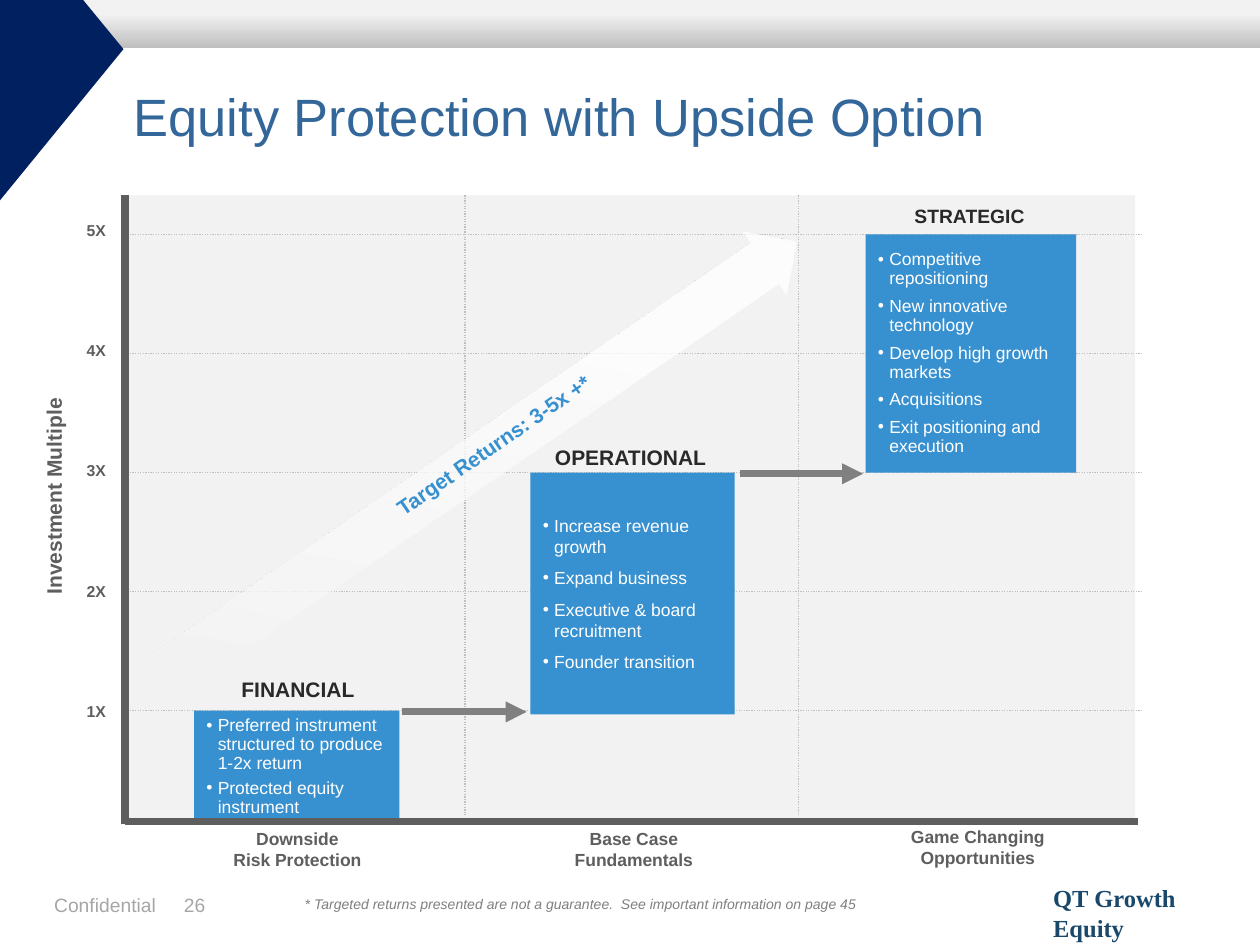
from lxml.etree import SubElement
from pptx import Presentation
from pptx.dml.color import RGBColor
from pptx.enum.dml import MSO_LINE
from pptx.enum.shapes import MSO_CONNECTOR, MSO_SHAPE
from pptx.enum.text import MSO_ANCHOR, MSO_AUTO_SIZE, PP_ALIGN
from pptx.oxml.ns import qn
from pptx.util import Inches, Pt

NAVY = RGBColor(0x00, 0x20, 0x60)
TITLE_BLUE = RGBColor(0x33, 0x66, 0x99)
BLUE = RGBColor(0x37, 0x90, 0xCF)
BRAND_BLUE = RGBColor(0x19, 0x48, 0x6A)
BLACK = RGBColor(0x29, 0x29, 0x29)
AXIS_GRAY = RGBColor(0x5E, 0x5E, 0x5E)
NOTE_GRAY = RGBColor(0x7F, 0x7F, 0x7F)
ARROW_GRAY = RGBColor(0x80, 0x80, 0x80)
FOOTER_GRAY = RGBColor(0xA5, 0xA6, 0xA6)
GRID_GRAY = RGBColor(0xBF, 0xBF, 0xBF)
PALE_GRAY = RGBColor(0xF2, 0xF2, 0xF2)
WHITE = RGBColor(0xFF, 0xFF, 0xFF)


def write_text(frame, text, size=10, color=AXIS_GRAY, bold=False, italic=False,
               font="Arial", align=PP_ALIGN.LEFT, before=0, after=0,
               spacing=None, bullet=False):
    """Fill a text frame, one paragraph for each line of text."""
    for index, line in enumerate(text.split("\n")):
        paragraph = frame.paragraphs[0] if index == 0 else frame.add_paragraph()
        if bullet:
            properties = paragraph._p.get_or_add_pPr()
            properties.set("marL", str(Inches(0.09)))
            properties.set("indent", str(-Inches(0.09)))
            SubElement(properties, qn("a:buFont"), typeface="Arial")
            SubElement(properties, qn("a:buChar"), char="•")
        paragraph.alignment = align
        paragraph.space_before = Pt(before if index else 0)
        paragraph.space_after = Pt(after)
        if spacing:
            paragraph.line_spacing = spacing
        run = paragraph.add_run()
        run.text = line
        run.font.name = font
        run.font.size = Pt(size)
        run.font.bold = bold
        run.font.italic = italic
        run.font.color.rgb = color


class SlideBuilder:
    def __init__(self, slide):
        self.shapes = slide.shapes

    def text(self, text, left, top, width, height, wrap=True, rotation=0,
             inset=True, anchor=MSO_ANCHOR.TOP, **style):
        box = self.shapes.add_textbox(
            Inches(left), Inches(top), Inches(width), Inches(height))
        box.rotation = rotation
        frame = box.text_frame
        frame.word_wrap = wrap
        frame.vertical_anchor = anchor
        if inset:
            frame.auto_size = MSO_AUTO_SIZE.SHAPE_TO_FIT_TEXT
        else:
            frame.margin_left = frame.margin_right = 0
            frame.margin_top = frame.margin_bottom = 0
        write_text(frame, text, **style)

    def block(self, left, top, width, height, kind=MSO_SHAPE.RECTANGLE,
              color=None):
        shape = self.shapes.add_shape(
            kind, Inches(left), Inches(top), Inches(width), Inches(height))
        self.finish(shape, color)
        return shape

    def finish(self, shape, color):
        shape.shadow.inherit = False
        shape.line.fill.background()
        if color is not None:
            shape.fill.solid()
            shape.fill.fore_color.rgb = color

    def polygon(self, points, color):
        corners = [(Inches(x), Inches(y)) for x, y in points]
        outline = self.shapes.build_freeform(*corners[0])
        outline.add_line_segments(corners[1:], close=True)
        self.finish(outline.convert_to_shape(), color)

    def gradient(self, shape, stops, angle, opacity=None):
        """Apply a two-stop gradient; the angle runs counter-clockwise."""
        shape.fill.gradient()
        shape.fill.gradient_angle = angle
        for stop, (position, color) in zip(shape.fill.gradient_stops, stops):
            stop.position = position
            stop.color.rgb = color
        if opacity:
            for tint in shape._element.spPr.iter(qn("a:srgbClr")):
                SubElement(tint, qn("a:alpha"), val=str(opacity * 1000))

    def bullets(self, shape, text, anchor=MSO_ANCHOR.MIDDLE, **style):
        frame = shape.text_frame
        frame.word_wrap = True
        frame.vertical_anchor = anchor
        write_text(frame, text, color=WHITE, bullet=True, **style)

    def line(self, start, end, color, width, dotted=False, arrow=False):
        connector = self.shapes.add_connector(
            MSO_CONNECTOR.STRAIGHT, *map(Inches, start + end))
        connector.line.color.rgb = color
        connector.line.width = Pt(width)
        if dotted:
            connector.line.dash_style = MSO_LINE.ROUND_DOT
        if arrow:
            SubElement(connector.line._get_or_add_ln(), qn("a:tailEnd"),
                       type="triangle")
        SubElement(connector._element.spPr, qn("a:effectLst"))


def main():
    presentation = Presentation()
    presentation.slide_width = Inches(10)
    presentation.slide_height = Inches(7.5)
    page = SlideBuilder(
        presentation.slides.add_slide(presentation.slide_layouts[6]))

    banner = page.block(0, 0, 10, 0.38)
    page.gradient(banner, [(0, GRID_GRAY), (0.72, PALE_GRAY)], 90)
    page.polygon([(0, 0), (0.66, 0), (0.98, 0.39), (0, 1.59)], NAVY)
    page.text("Equity Protection with Upside Option", 1.06, 0.44, 8.58, 1.02,
              inset=False, anchor=MSO_ANCHOR.MIDDLE, size=30,
              color=TITLE_BLUE, spacing=0.9)

    # Plot area, grid and axes
    page.block(0.98, 1.55, 8.03, 4.96, color=PALE_GRAY)
    for x in (3.69, 6.34):
        page.line((x, 1.55), (x, 6.47), GRID_GRAY, 0.75, dotted=True)
    for step in range(5):
        y = 5.64 - 0.945 * step
        page.line((1.03, y), (9.07, y), GRID_GRAY, 0.75, dotted=True)
        page.text(f"{step + 1}X", 0.59, 5.52 - 0.955 * step, 0.36, 0.25,
                  wrap=False, size=9, bold=True, after=6)
    page.line((0.99, 6.54), (0.99, 1.55), AXIS_GRAY, 4.5)
    page.text("Investment Multiple", -0.46, 3.78, 1.77, 0.3, wrap=False,
              rotation=270, size=12, bold=True, after=6)

    # Stages
    for name, left, top, width, size in (
            ("FINANCIAL", 1.59, 5.32, 1.55, 12),
            ("OPERATIONAL", 4.22, 3.48, 1.57, 12),
            ("STRATEGIC", 6.91, 1.57, 1.57, 11)):
        page.text(name, left, top, width, 0.3, size=size, color=BLACK,
                  bold=True, align=PP_ALIGN.CENTER)
    for caption, left, top, width in (
            ("Downside\nRisk Protection", 1.14, 6.52, 2.44),
            ("Base Case\nFundamentals", 3.82, 6.52, 2.42),
            ("Game Changing\nOpportunities", 6.42, 6.51, 2.68)):
        page.text(caption, left, top, width, 0.44, bold=True,
                  align=PP_ALIGN.CENTER)

    financial = page.block(1.54, 5.64, 1.63, 0.89, color=BLUE)
    page.bullets(financial,
                 "Preferred instrument structured to produce 1-2x return\n"
                 "Protected equity instrument",
                 anchor=MSO_ANCHOR.TOP, spacing=0.9, after=3)
    operational = page.block(4.21, 3.75, 1.62, 1.92, color=BLUE)
    page.bullets(operational,
                 "Increase revenue growth\nExpand business\n"
                 "Executive & board recruitment\nFounder transition", after=6)
    strategic = page.block(6.87, 1.86, 1.67, 1.89, MSO_SHAPE.PENTAGON, BLUE)
    strategic.adjustments[0] = 0
    page.bullets(strategic,
                 "Competitive repositioning\nNew innovative technology\n"
                 "Develop high growth markets\nAcquisitions\n"
                 "Exit positioning and execution", spacing=0.9, after=5)

    page.line((0.99, 6.52), (9.03, 6.52), AXIS_GRAY, 4.5)
    page.line((5.87, 3.76), (6.85, 3.76), ARROW_GRAY, 4, arrow=True)
    page.line((3.19, 5.65), (4.18, 5.65), ARROW_GRAY, 4, arrow=True)

    # Target returns
    returns = page.block(0.74, 3.34, 6.12, 0.62, MSO_SHAPE.RIGHT_ARROW)
    returns.adjustments[0] = 0.64
    returns.rotation = 325.5
    page.gradient(returns, [(0, PALE_GRAY), (0.71, WHITE)], 45, opacity=77)
    page.text("Target Returns: 3-5x +*", 2.85, 3.38, 2.13, 0.3,
              rotation=325.4, size=12, color=BLUE, bold=True,
              align=PP_ALIGN.CENTER)

    # Footer
    page.text("Confidential", 0.43, 7.09, 0.94, 0.29, inset=False, size=11,
              color=FOOTER_GRAY)
    page.text("26", 1.46, 7.09, 0.63, 0.29, inset=False, size=11,
              color=FOOTER_GRAY)
    page.text("* Targeted returns presented are not a guarantee.  "
              "See important information on page 45", 2.32, 7.06, 5.04, 0.24,
              size=8, color=NOTE_GRAY, italic=True, after=6)
    page.text("QT Growth Equity", 8.26, 6.96, 1.78, 0.34, wrap=False, size=14,
              color=BRAND_BLUE, bold=True, font="Times New Roman")

    presentation.save("out.pptx")


if __name__ == "__main__":
    main()
